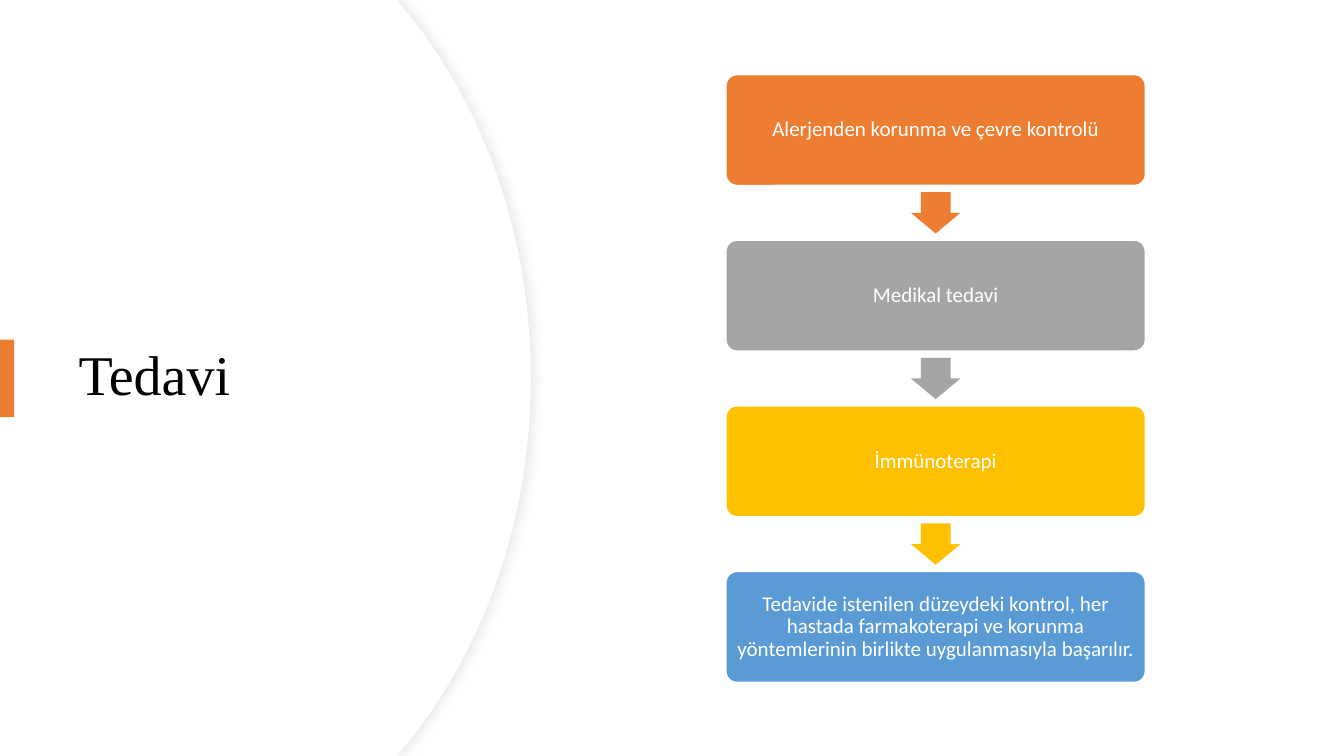
from lxml.etree import SubElement
from pptx import Presentation
from pptx.dml.color import RGBColor
from pptx.enum.shapes import MSO_SHAPE
from pptx.enum.text import MSO_ANCHOR, PP_ALIGN
from pptx.oxml.ns import qn
from pptx.util import Inches, Pt

TITLE = "Tedavi"
STEPS = [
    ("Alerjenden korunma ve çevre kontrolü", "orange"),
    ("Medikal tedavi", "gray"),
    ("İmmünoterapi", "gold"),
    ("Tedavide istenilen düzeydeki kontrol, her hastada farmakoterapi ve korunma "
     "yöntemlerinin birlikte uygulanmasıyla başarılır.", "blue"),
]
COLORS = {"orange": "ED7D31", "gray": "A5A5A5", "gold": "FFC000", "blue": "5B9BD5",
          "white": "FFFFFF", "black": "000000", "edge": "EFEFEF", "shadow": "D9D9D9"}
SLIDE_W, SLIDE_H = 13.33, 7.5
BOX_X, BOX_W, BOX_H = 7.2, 4.16, 1.1
FIRST_Y, LAST_Y = 0.74, 5.67
PITCH = (LAST_Y - FIRST_Y) / (len(STEPS) - 1)
ARROW_W, ARROW_H = 0.49, 0.41


def rgb(name):
    return RGBColor.from_string(COLORS[name])


def paint(sp, fill, line=None, width=1):
    sp.shadow.inherit = False
    sp.fill.solid()
    sp.fill.fore_color.rgb = rgb(fill)
    if line:
        sp.line.color.rgb = rgb(line)
        sp.line.width = Pt(width)
    else:
        sp.line.fill.background()


def add_shape(shapes, kind, x, y, w, h, fill, line=None):
    sp = shapes.add_shape(kind, Inches(x), Inches(y), Inches(w), Inches(h))
    paint(sp, fill, line)
    return sp


def add_text(sp, text, font, size, color, align):
    tf = sp.text_frame
    tf.word_wrap = True
    tf.vertical_anchor = MSO_ANCHOR.MIDDLE
    p = tf.paragraphs[0]
    p.alignment = align
    p.line_spacing = 0.9
    r = p.add_run()
    r.text = text
    r.font.name = font
    r.font.size = Pt(size)
    r.font.color.rgb = rgb(color)
    return tf


def add_panel(s, right):
    top = [(right - 1.26, 0.08), (right - 0.48, 1.02), (right, 2.32), (right, 3.75)]
    bottom = [(x, SLIDE_H - y) for x, y in reversed(top[:3])]
    points = [(3.94, 0), *top, *bottom, (3.94, SLIDE_H), (0, SLIDE_H)]
    fb = s.shapes.build_freeform(0, 0, scale=Inches(1))
    fb = s.shapes.build_freeform(0, 0, scale=Inches(0.01))
    fb.add_line_segments([(round(x * 100), round(y * 100)) for x, y in points], close=True)
    sp = fb.convert_to_shape()
    lines = list(sp._element.iter(qn("a:lnTo")))
    for start in (2, 5):
        first, *others = lines[start:start + 3]
        first.tag = qn("a:cubicBezTo")
        for line in others:
            first.append(line[0])
            line.getparent().remove(line)
    return sp


def add_shadow(sp):
    effects = sp._element.spPr.find(qn("a:effectLst"))
    shadow = SubElement(effects, qn("a:outerShdw"), blurRad=str(Pt(7)), dist=str(Pt(3)),
                        dir="0", algn="l", rotWithShape="0")
    color = SubElement(shadow, qn("a:srgbClr"), val=COLORS["shadow"])
    SubElement(color, qn("a:alpha"), val="50000")


def main():
    """Build the treatment steps slide."""
    prs = Presentation()
    prs.slide_width, prs.slide_height = Inches(SLIDE_W), Inches(SLIDE_H)
    s = prs.slides.add_slide(prs.slide_layouts[5])

    edge = add_panel(s, 5.27)
    paint(edge, "white", "edge", 0.75)
    add_shadow(edge)
    paint(add_panel(s, 5.26), "white")

    title = s.shapes.title
    title.left, title.top = Inches(0.68), Inches(1.27)
    title.width, title.height = Inches(3.94), Inches(4.95)
    add_text(title, TITLE, "Times New Roman", 40, "black", PP_ALIGN.LEFT)
    s.shapes._spTree.append(title._element)
    add_shape(s.shapes, MSO_SHAPE.RECTANGLE, 0, 3.37, 0.14, 0.77, "orange")

    flow = s.shapes.add_group_shape().shapes
    for i, (text, color) in enumerate(STEPS):
        y = FIRST_Y + i * PITCH
        box = add_shape(flow, MSO_SHAPE.ROUNDED_RECTANGLE, BOX_X, y, BOX_W, BOX_H, color, "white")
        box.adjustments[0] = 0.1
        tf = add_text(box, text, "Calibri", 15, "white", PP_ALIGN.CENTER)
        tf.margin_left = tf.margin_right = tf.margin_top = tf.margin_bottom = Inches(0.06)
        if i < len(STEPS) - 1:
            arrow_x = BOX_X + (BOX_W - ARROW_W) / 2
            arrow_y = y + BOX_H + (PITCH - BOX_H - ARROW_H) / 2
            arrow = add_shape(flow, MSO_SHAPE.DOWN_ARROW, arrow_x, arrow_y, ARROW_W, ARROW_H, color)
            arrow.adjustments[0] = 0.6
            arrow.adjustments[1] = 0.5

    prs.save("out.pptx")


if __name__ == "__main__":
    main()
